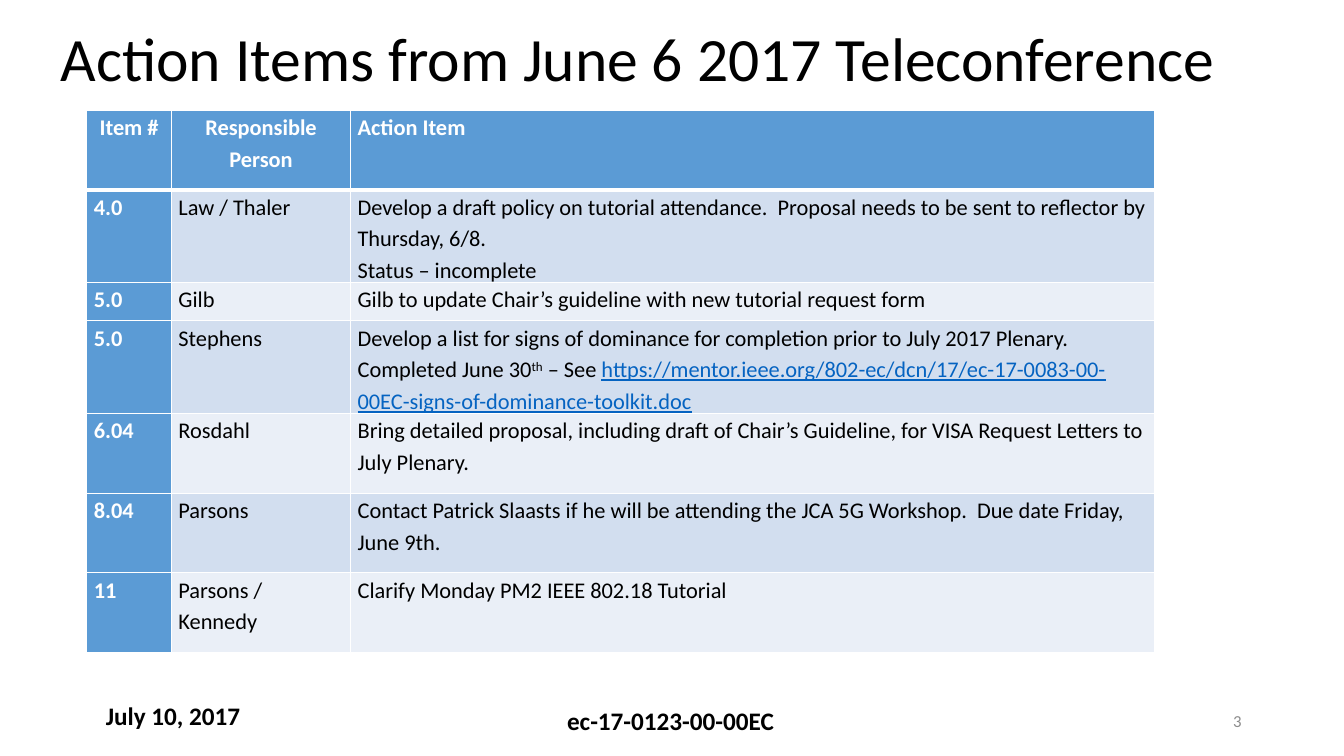
import pptx
import pptx.dml.color
import pptx.enum.text
import pptx.oxml
import pptx.oxml.ns
import pptx.util

Pt = pptx.util.Pt
Align = pptx.enum.text.PP_ALIGN
Anchor = pptx.enum.text.MSO_ANCHOR
Fit = pptx.enum.text.MSO_AUTO_SIZE
RGBColor = pptx.dml.color.RGBColor

BLACK = RGBColor(0x00, 0x00, 0x00)
WHITE = RGBColor(0xFF, 0xFF, 0xFF)
GRAY = RGBColor(0x8C, 0x8C, 0x8C)
BLUE = RGBColor(0x5B, 0x9B, 0xD5)
BAND_DARK = RGBColor(0xD2, 0xDE, 0xEF)
BAND_LIGHT = RGBColor(0xEA, 0xEF, 0xF7)
LINK = RGBColor(0x05, 0x63, 0xC1)

HEADINGS = ("Item #", "Responsible Person", "Action Item")
COMPLETED = [
    ("Completed June 30", {}),
    ("th", {"baseline": 30000}),
    (" – See ", {}),
    ("https://mentor.ieee.org/802-ec/dcn/17/ec-17-0083-00-00EC-signs-of-dominance-toolkit.doc",
     {"color": LINK, "underline": True}),
]
ACTIONS = [
    ("4.0", "Law / Thaler",
     ["Develop a draft policy on tutorial attendance.  Proposal needs to be sent to reflector by Thursday, 6/8.",
      "Status – incomplete"]),
    ("5.0", "Gilb", ["Gilb to update Chair’s guideline with new tutorial request form"]),
    ("5.0", "Stephens",
     ["Develop a list for signs of dominance for completion prior to July 2017 Plenary.", COMPLETED]),
    ("6.04", "Rosdahl",
     ["Bring detailed proposal, including draft of Chair’s Guideline, for VISA Request Letters to July Plenary."]),
    ("8.04", "Parsons",
     ["Contact Patrick Slaasts if he will be attending the JCA 5G Workshop.  Due date Friday, June 9th."]),
    ("11", "Parsons / Kennedy", ["Clarify Monday PM2 IEEE 802.18 Tutorial"]),
]
COLUMN_WIDTHS = (60.5, 128, 574.5)
ROW_HEIGHT = 56.9
SHORT_ROW_HEIGHT = 27.4


class SlideBuilder:
    def __init__(self, page, font_name):
        self.page = page
        self.font_name = font_name

    def assign(self, target, values):
        for name, value in values.items():
            setattr(target, name, value)

    def fill_text(self, frame, paragraphs, size, color=BLACK, bold=False,
                  align=Align.LEFT, line_spacing=1.0):
        for index, content in enumerate(paragraphs):
            para = frame.add_paragraph() if index else frame.paragraphs[0]
            self.assign(para, {"alignment": align, "line_spacing": line_spacing})
            spans = [(content, {})] if isinstance(content, str) else content
            for text, changes in spans:
                span = para.add_run()
                span.text = text
                self.assign(span.font, {
                    "name": self.font_name, "size": Pt(size), "bold": bold,
                    "underline": changes.get("underline", False)})
                span.font.color.rgb = changes.get("color", color)
                if "baseline" in changes:
                    span.font._element.set("baseline", str(changes["baseline"]))

    def place(self, box, left, top, width, height):
        self.assign(box, {"left": Pt(left), "top": Pt(top),
                          "width": Pt(width), "height": Pt(height)})

    def title(self, text, *place):
        box = self.page.shapes.title
        self.place(box, *place)
        self.assign(box.text_frame, {"word_wrap": True, "auto_size": Fit.NONE,
                                     "vertical_anchor": Anchor.MIDDLE})
        self.fill_text(box.text_frame, [text], 44, line_spacing=0.9)

    def text(self, text, *place, wrap=False, anchor=Anchor.TOP, **style):
        box = self.page.shapes.add_textbox(*map(Pt, place))
        self.assign(box.text_frame, {"word_wrap": wrap, "vertical_anchor": anchor})
        self.fill_text(box.text_frame, [text], **style)

    def borders(self, cell, widths):
        properties = cell._tc.get_or_add_tcPr()
        for index, (side, width) in enumerate(widths.items()):
            line = pptx.oxml.parse_xml(
                f'<a:ln{side} {pptx.oxml.ns.nsdecls("a")} w="{Pt(width)}">'
                f'<a:solidFill><a:srgbClr val="{WHITE}"/></a:solidFill></a:ln{side}>')
            properties.insert(index, line)

    def cell(self, cell, paragraphs, fill, widths, **style):
        self.assign(cell, {"margin_left": Pt(5), "margin_right": Pt(5),
                           "margin_top": 0, "margin_bottom": 0,
                           "vertical_anchor": Anchor.TOP})
        cell.fill.solid()
        cell.fill.fore_color.rgb = fill
        self.borders(cell, widths)
        self.fill_text(cell.text_frame, paragraphs, 16, line_spacing=1.15, **style)

    def action_table(self, left, top):
        heights = [ROW_HEIGHT] * (len(ACTIONS) + 1)
        heights[2] = SHORT_ROW_HEIGHT
        table = self.page.shapes.add_table(
            len(heights), len(COLUMN_WIDTHS), Pt(left), Pt(top),
            Pt(sum(COLUMN_WIDTHS)), Pt(sum(heights))).table
        table.horz_banding = False
        for column, width in zip(table.columns, COLUMN_WIDTHS):
            column.width = Pt(width)
        for row, height in zip(table.rows, heights):
            row.height = Pt(height)
        for column, heading in enumerate(HEADINGS):
            self.cell(table.cell(0, column), [heading], BLUE,
                      {"L": 1, "R": 1, "T": 1, "B": 3}, color=WHITE, bold=True,
                      align=Align.LEFT if column == 2 else Align.CENTER)
        for row, (item, person, action) in enumerate(ACTIONS, 1):
            band = BAND_DARK if row % 2 else BAND_LIGHT
            widths = {"L": 1, "R": 1, "T": 3 if row == 1 else 1, "B": 1}
            self.cell(table.cell(row, 0), [item], BLUE, widths, color=WHITE, bold=True)
            self.cell(table.cell(row, 1), [person], band, widths)
            self.cell(table.cell(row, 2), action, band, widths)


def main():
    deck = pptx.Presentation()
    deck.slide_width, deck.slide_height = Pt(960), Pt(540)
    builder = SlideBuilder(deck.slides.add_slide(deck.slide_layouts[5]), "Calibri")
    builder.text("ec-17-0123-00-00EC", 398, 500.5, 163.5, 29, size=18, bold=True)
    builder.text("July 10, 2017", 68.5, 497, 111.5, 29, size=18, bold=True)
    builder.title("Action Items from June 6 2017 Teleconference", 36, 5, 856, 78.5)
    builder.action_table(62, 78.75)
    builder.text("3", 678, 500.5, 216, 28.8, wrap=True, anchor=Anchor.MIDDLE,
                 size=12, color=GRAY, align=Align.RIGHT)
    deck.save("out.pptx")


if __name__ == "__main__":
    main()
